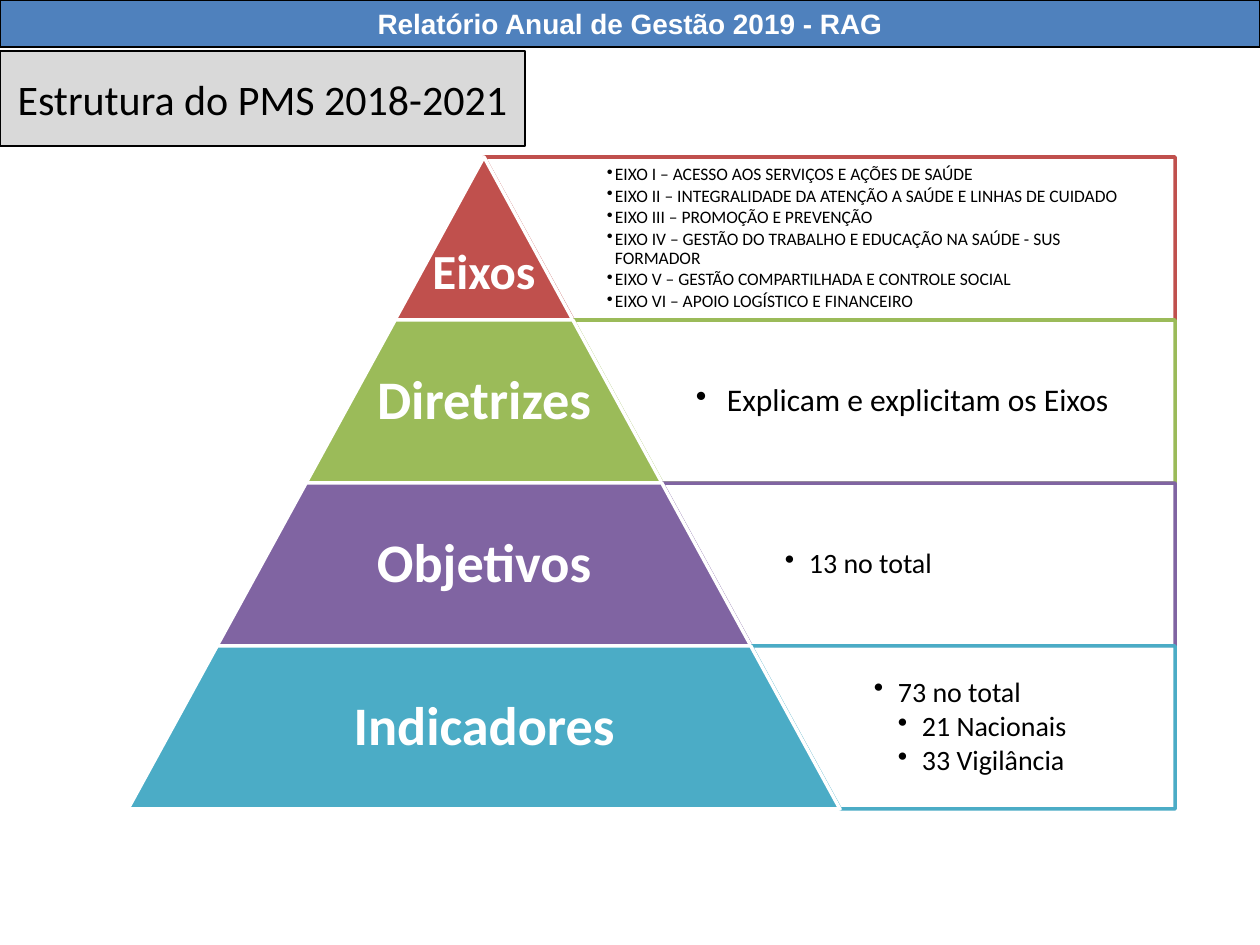
from lxml import etree
from pptx import Presentation
from pptx.dml.color import RGBColor
from pptx.enum.shapes import MSO_SHAPE
from pptx.enum.text import MSO_ANCHOR, PP_ALIGN
from pptx.oxml.ns import qn
from pptx.util import Emu, Inches, Pt

RECT = MSO_SHAPE.RECTANGLE
TIER = MSO_SHAPE.TRAPEZOID
PANEL = MSO_SHAPE.NON_ISOSCELES_TRAPEZOID
MIDDLE = MSO_ANCHOR.MIDDLE
CENTER, LEFT = PP_ALIGN.CENTER, PP_ALIGN.LEFT

WHITE = RGBColor(0xFF, 0xFF, 0xFF)
BLACK = RGBColor(0x00, 0x00, 0x00)
GRAY = RGBColor(0xD9, 0xD9, 0xD9)
BLUE = RGBColor(0x4F, 0x81, 0xBD)
RED = RGBColor(0xC0, 0x50, 0x4D)
GREEN = RGBColor(0x9B, 0xBB, 0x59)
PURPLE = RGBColor(0x80, 0x64, 0xA2)
TEAL = RGBColor(0x4B, 0xAC, 0xC6)

# Pyramid geometry in px
APEX, TOP, RIGHT = 484, 157, 1175
HIGH, STEP = 163, 89
SLOPE = 0.547

# Label, label size, top inset, colour, bullet size, indent, (level, text)
TIERS = [
    ("Eixos", 28, 75, RED, 10, 8, [
        (1, "EIXO I – ACESSO AOS SERVIÇOS E AÇÕES DE SAÚDE"),
        (1, "EIXO II – INTEGRALIDADE DA ATENÇÃO A SAÚDE E LINHAS DE CUIDADO"),
        (1, "EIXO III – PROMOÇÃO E PREVENÇÃO"),
        (1, "EIXO IV – GESTÃO DO TRABALHO E EDUCAÇÃO NA SAÚDE - SUS FORMADOR"),
        (1, "EIXO V – GESTÃO COMPARTILHADA E CONTROLE SOCIAL"),
        (1, "EIXO VI – APOIO LOGÍSTICO E FINANCEIRO")]),
    ("Diretrizes", 31, 5, GREEN, 18, 31, [
        (1, "Explicam e explicitam os Eixos")]),
    ("Objetivos", 31, 5, PURPLE, 16, 24, [(1, "13 no total")]),
    ("Indicadores", 31, 5, TEAL, 16, 24, [
        (1, "73 no total"), (2, "21 Nacionais"), (2, "33 Vigilância")]),
]


def px(n):
    return Emu(round(n * 914400 / 126))


class Deck:
    font = "Calibri"

    def __init__(self, slide):
        self.slide = slide

    def shape(self, kind, box, fill, line, width, adj=(), turn=0):
        item = self.slide.shapes.add_shape(kind, *map(px, box))
        item.shadow.inherit = False
        for i, value in enumerate(adj):
            item.adjustments[i] = value
        item.rotation = turn
        item.fill.solid()
        item.fill.fore_color.rgb = fill
        item.line.color.rgb = line
        item.line.width = Pt(width)
        return item

    def fade(self, item, share):
        color = item.fill._xPr.find(qn("a:solidFill"))[0]
        etree.SubElement(color, qn("a:alpha")).set("val", str(share * 1000))

    def style(self, para, size, color, bold=False, align=CENTER, font=None):
        para.alignment = align
        for run in para.runs:
            run.font.name = font or self.font
            run.font.size = Pt(size)
            run.font.bold = bold
            run.font.color.rgb = color

    def banner(self, box, fill, text, size, color, bold=False, font=None):
        frame = self.shape(RECT, box, fill, BLACK, 0.75).text_frame
        frame.word_wrap = True
        frame.vertical_anchor = MIDDLE
        frame.text = text
        self.style(frame.paragraphs[0], size, color, bold, font=font)

    def frame(self, box, inset):
        frame = self.slide.shapes.add_textbox(*map(px, box)).text_frame
        frame.word_wrap = True
        frame.vertical_anchor = MIDDLE
        frame.margin_left = frame.margin_right = px(inset)
        frame.margin_top = frame.margin_bottom = px(inset)
        return frame

    def label(self, box, text, size, drop):
        frame = self.frame(box, 5)
        frame.margin_top = px(drop)
        frame.text = text
        para = frame.paragraphs[0]
        self.style(para, size, WHITE, True)
        para.line_spacing = 0.9
        para.space_after = Pt(size * 0.35)

    def bullets(self, box, rows, size, indent):
        frame = self.frame(box, 34)
        frame.text = "\n".join(text for _, text in rows)
        for para, (level, _) in zip(frame.paragraphs, rows):
            self.style(para, size, BLACK, align=LEFT)
            para.level = level
            para.line_spacing = 0.9
            para.space_after = Pt(size * 0.15)
            props = para._p.get_or_add_pPr()
            props.set("marL", str(px(indent * level)))
            props.set("indent", str(-px(indent)))
            etree.SubElement(props, qn("a:buChar")).set("char", "•")


def main():
    show = Presentation()
    show.slide_width, show.slide_height = Inches(10), Inches(7.5)
    deck = Deck(show.slides.add_slide(show.slide_layouts[6]))

    # Header bar
    deck.banner((0, 0, 1260, 47), BLUE, "Relatório Anual de Gestão 2019 - RAG",
                16, WHITE, True, "Arial")

    # Pyramid tiers, each with its panel
    for i, (name, big, drop, color, size, indent, rows) in enumerate(TIERS):
        top = TOP + i * HIGH
        start = APEX + i * STEP
        half = (i + 1) * STEP
        panel = deck.shape(PANEL, (start, top, RIGHT - start, HIGH),
                           WHITE, color, 2, (0, SLOPE), 180)
        deck.fade(panel, 90)
        edge = APEX + half
        deck.bullets((edge, top, RIGHT - edge, HIGH), rows, size, indent)
        deck.shape(TIER, (APEX - half, top, 2 * half, HIGH),
                   color, WHITE, 2, (SLOPE,))
        inner = half * 0.65 if i else half
        deck.label((APEX - inner, top, 2 * inner, HIGH), name, big, drop)

    # Slide title
    deck.banner((0, 51, 525, 95), GRAY, "Estrutura do PMS 2018-2021",
                24, BLACK)

    show.save("out.pptx")


if __name__ == "__main__":
    main()
